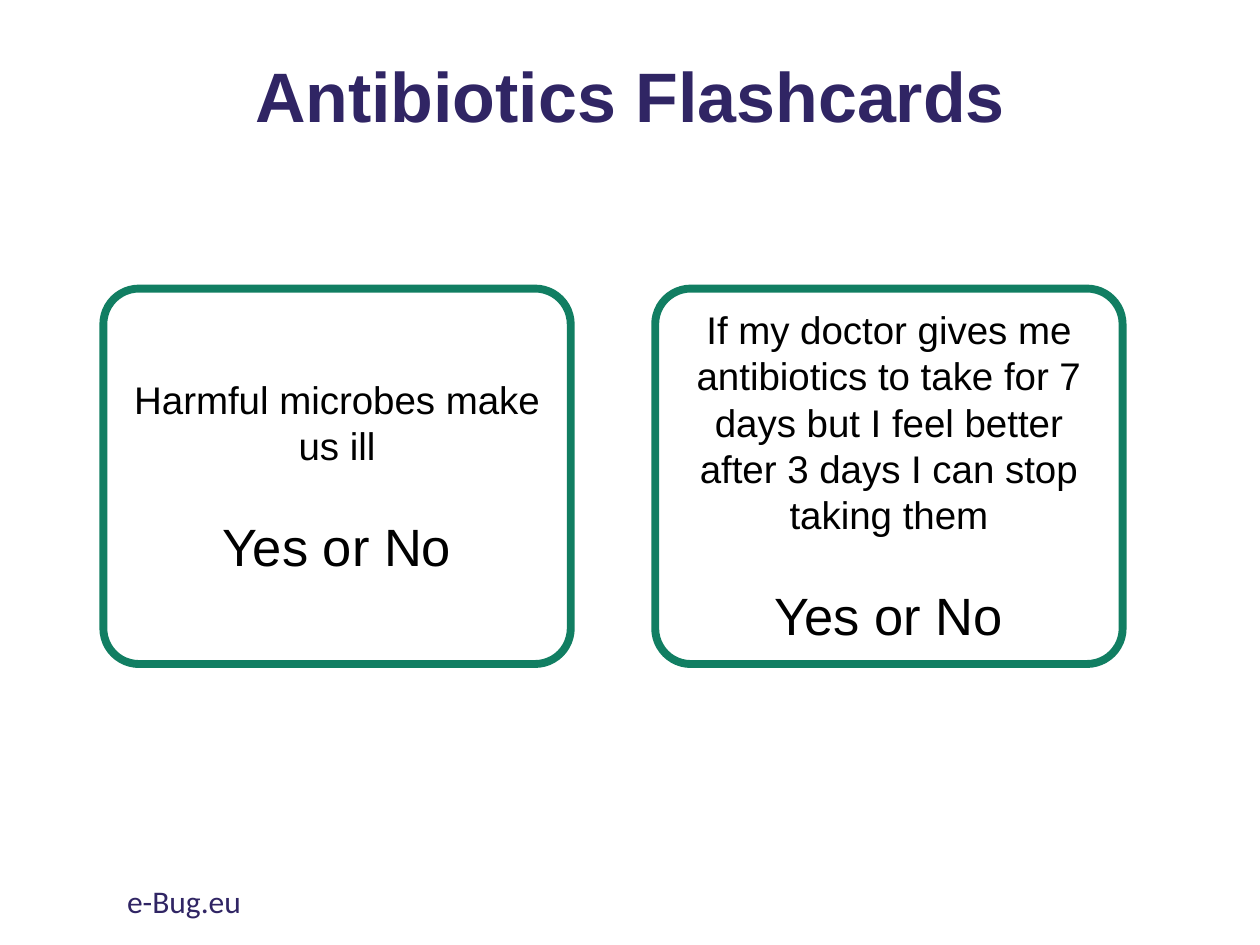
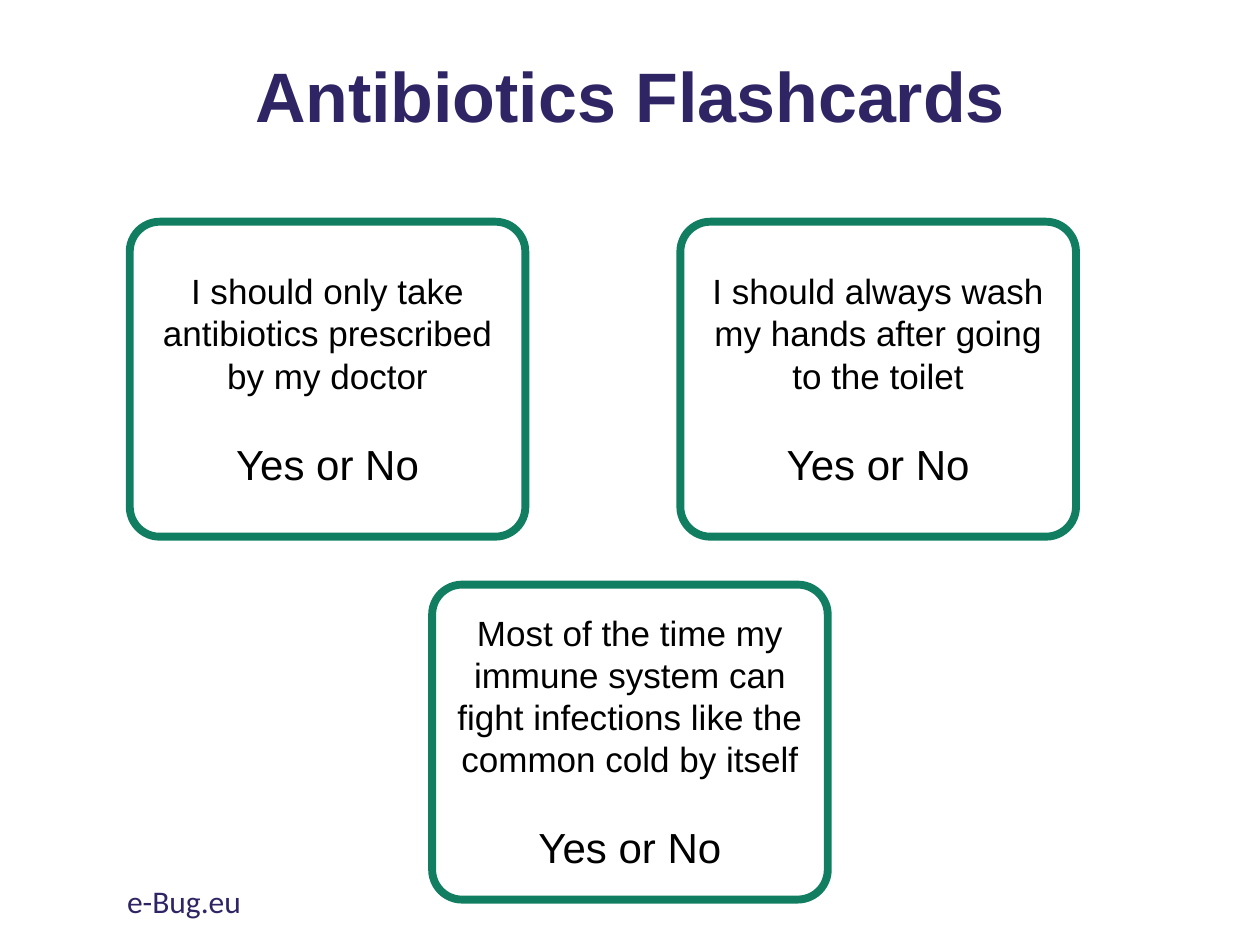
from dataclasses import dataclass

import pptx
import pptx.dml.color
import pptx.enum.shapes
import pptx.enum.text
import pptx.util

Inches = pptx.util.Inches
Pt = pptx.util.Pt
RGB = pptx.dml.color.RGBColor
ALIGN = pptx.enum.text.PP_ALIGN
MIDDLE = pptx.enum.text.MSO_ANCHOR.MIDDLE
ROUNDED = pptx.enum.shapes.MSO_SHAPE.ROUNDED_RECTANGLE


@dataclass(frozen=True)
class Theme:
    navy: RGB = RGB.from_string("302564")
    green: RGB = RGB.from_string("117E62")
    black: RGB = RGB.from_string("000000")
    card_font: str = "Arial"
    footer_font: str = "Calibri"
    title_size: int = 40
    footer_size: int = 18
    border: float = 4.5
    corner: float = 0.095
    line_height: float = 1.2


theme = Theme()

# Each card: left, top and the paragraphs of its statement
decks = [
    {
        "card_size": (3.71, 2.98), "statement_size": 22, "answer_size": 30,
        "cards": [
            (0.82, 2.29, ["Harmful microbes make us ill"]),
            (5.2, 2.29, ["If my doctor gives me antibiotics to take for 7 days "
                         "but I feel better after 3 days I can stop taking them"]),
        ],
    },
    {
        "card_size": (3.14, 2.5), "statement_size": 20, "answer_size": 24,
        "cards": [
            (1.03, 1.76, ["I should only take antibiotics prescribed by my doctor"]),
            (5.4, 1.76, ["I should always wash my hands after going", "to the toilet"]),
            (3.43, 4.64, ["Most of the time my",
                          "immune system can fight infections like the common cold by itself"]),
        ],
    },
]


def write_paragraph(frame, text, size, color, font=theme.card_font, align=ALIGN.CENTER, bold=False):
    """Fill the frame's first paragraph if it is empty, otherwise append one."""
    paragraph = frame.paragraphs[0]
    if paragraph.runs:
        paragraph = frame.add_paragraph()
    paragraph.alignment = align
    run = paragraph.add_run()
    run.text = text
    run.font.name = font
    run.font.size = Pt(size)
    run.font.bold = bold
    run.font.color.rgb = color
    return paragraph


def add_text_frame(slide, left, top, width, height):
    frame = slide.shapes.add_textbox(
        Inches(left), Inches(top), Inches(width), Inches(height)).text_frame
    frame.word_wrap = True
    return frame


presentation = pptx.Presentation()
presentation.slide_width = Inches(10)
presentation.slide_height = Inches(7.5)

for deck in decks:
    slide = presentation.slides.add_slide(presentation.slide_layouts[6])

    title = add_text_frame(slide, 0.69, 0.28, 8.62, 1.03)
    title.vertical_anchor = MIDDLE
    heading = write_paragraph(title, "Antibiotics Flashcards", theme.title_size, theme.navy, bold=True)
    heading.line_spacing = 0.9

    card_width, card_height = deck["card_size"]
    for left, top, statement in deck["cards"]:
        card = slide.shapes.add_shape(
            ROUNDED, Inches(left), Inches(top), Inches(card_width), Inches(card_height))
        card.adjustments[0] = theme.corner
        card.shadow.inherit = False
        card.fill.background()
        card.line.color.rgb = theme.green
        card.line.width = Pt(theme.border)
        card.text_frame.word_wrap = True
        card.text_frame.vertical_anchor = MIDDLE
        for sentence in statement:
            write_paragraph(card.text_frame, sentence, deck["statement_size"], theme.black)
        answer = write_paragraph(card.text_frame, "Yes or No", deck["answer_size"], theme.black)
        answer.space_before = Pt(deck["statement_size"] * theme.line_height)

    footer = add_text_frame(slide, 0.91, 6.95, 3.38, 0.4)
    write_paragraph(footer, "e-Bug.eu", theme.footer_size, theme.navy,
                    font=theme.footer_font, align=ALIGN.LEFT)

presentation.save("out.pptx")
